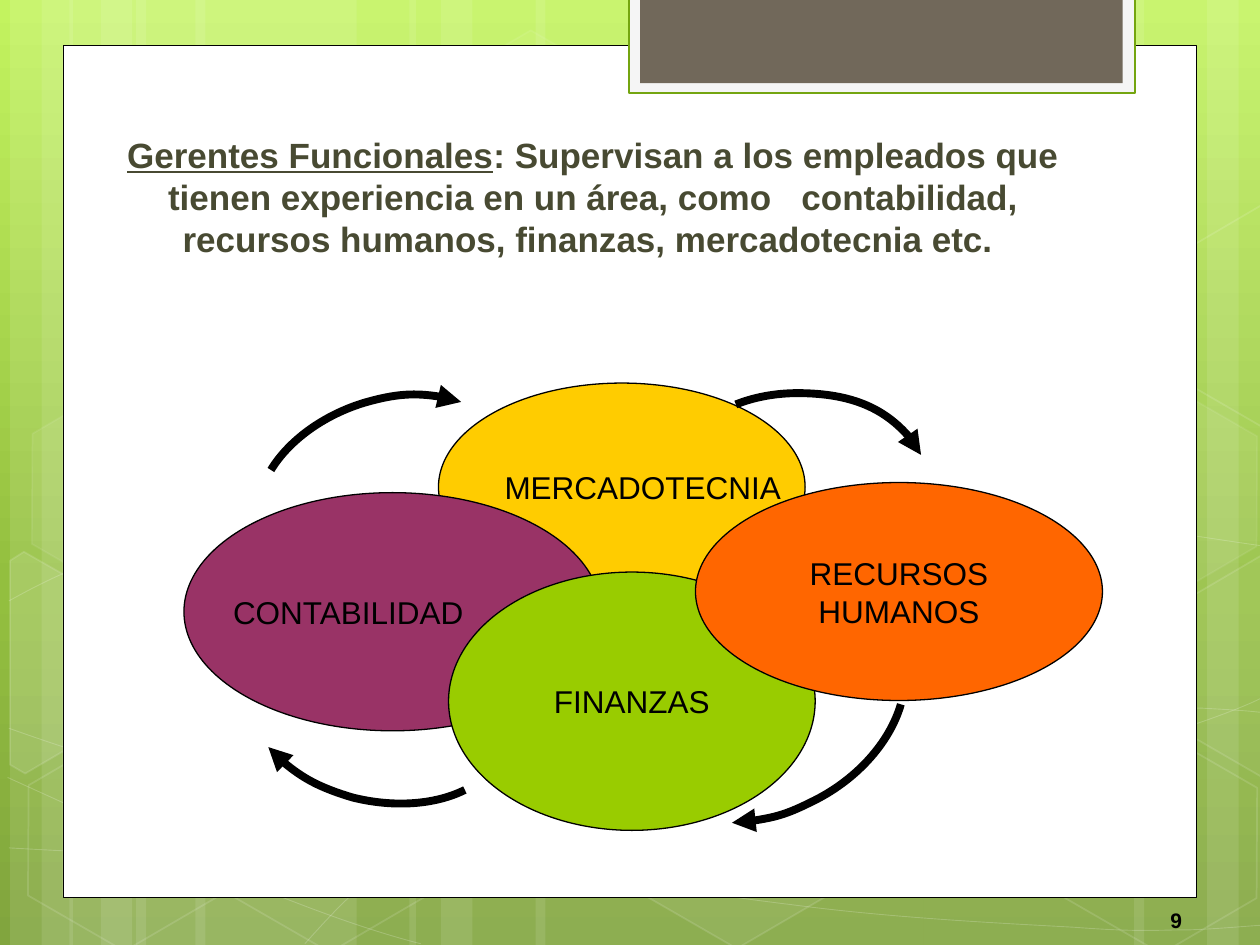
import copy

import lxml.etree
import pptx
import pptx.dml.color
import pptx.enum.shapes
import pptx.enum.text
import pptx.oxml.ns
import pptx.util

Inches = pptx.util.Inches
Pt = pptx.util.Pt
RGBColor = pptx.dml.color.RGBColor
MSO_SHAPE = pptx.enum.shapes.MSO_SHAPE
PP_ALIGN = pptx.enum.text.PP_ALIGN
MSO_ANCHOR = pptx.enum.text.MSO_ANCHOR
qn = pptx.oxml.ns.qn

WHITE = RGBColor(0xFF, 0xFF, 0xFF)
BLACK = RGBColor(0x00, 0x00, 0x00)
TITLE_OLIVE = RGBColor(0x48, 0x4A, 0x32)
TAB_FRAME = RGBColor(0xF5, 0xF5, 0xF5)
TAB_EDGE = RGBColor(0x74, 0xA5, 0x10)
TAB_BROWN = RGBColor(0x71, 0x68, 0x5A)
YELLOW = RGBColor(0xFF, 0xCC, 0x00)
PURPLE = RGBColor(0x99, 0x33, 0x66)
GREEN = RGBColor(0x99, 0xCC, 0x00)
ORANGE = RGBColor(0xFF, 0x66, 0x00)
BACKDROP = [
    (0, RGBColor(0xC3, 0xF3, 0x5F)),
    (0.62, RGBColor(0x93, 0xBF, 0x3F)),
    (1, RGBColor(0x81, 0xA5, 0x3E)),
]

TITLE_RUNS = [
    ("Gerentes Funcionales", {"u": "sng"}),
    (": Supervisan a los empleados que tienen experiencia en un área, como", {}),
    (" ", {"spc": "1112"}),
    ("contabilidad, recursos humanos, finanzas, mercadotecnia etc. ", {}),
]
BANDS = [
    (1.08, 1.75, 0), (0.08, 0.5, 0), (0.33, 0.83, 0), (1.55, 1.75, 0), (0.55, 0.5, 0), (0.8, 0.83, 0),
    (7.33, 1.75, 180), (9.58, 0.5, 180), (9, 0.83, 180), (4.25, 3.08, 0), (3.25, 0.5, 0), (3.5, 0.83, 0),
]
WAVES = [
    [(0.07, 6.73), (0.61, 6.76), (1.15, 6.79), (1.9, 6.78), (2.65, 6.77), (3.58, 6.75), (4.58, 6.65),
     (5.58, 6.55), (7, 6.36), (7.92, 6.17), (8.83, 5.98), (9.77, 5.68), (10.07, 5.51)],
    [(0.07, 4.77), (0.36, 4.61), (0.65, 4.46), (1.21, 4.31), (1.78, 4.16), (2.59, 3.94), (3.47, 3.87),
     (4.36, 3.8), (5.44, 3.79), (6.54, 3.87), (7.64, 3.95), (9.47, 4.26), (10.07, 4.34)],
    [(0.06, 6.17), (1.27, 6.72), (2.47, 7.27), (3.34, 7.49)],
    [(0.07, 5.78), (0.38, 5.89), (0.7, 6), (1.28, 6.16), (1.86, 6.31), (2.73, 6.56), (3.57, 6.73),
     (4.4, 6.9), (5.45, 7.08), (6.28, 7.18), (7.11, 7.29), (8, 7.33), (8.53, 7.36),
     (9.05, 7.4), (9.19, 7.38), (9.45, 7.38), (9.71, 7.37), (9.89, 7.35), (10.07, 7.34)],
    [(2.42, 7.49), (2.6, 7.29), (2.78, 7.09), (3.02, 6.91), (3.26, 6.73), (3.6, 6.53), (3.88, 6.39),
     (4.16, 6.25), (4.33, 6.19), (4.7, 6.09), (5.06, 5.99), (5.73, 5.85), (6.08, 5.78),
     (6.44, 5.71), (6.49, 5.71), (6.8, 5.69), (7.11, 5.66), (7.6, 5.63), (7.94, 5.62),
     (8.29, 5.61), (8.86, 5.62), (8.86, 5.62), (9.08, 5.62), (9.3, 5.62), (9.53, 5.62),
     (9.71, 5.63), (9.88, 5.64), (9.97, 5.65), (10.06, 5.66), (10.03, 5.65), (10.06, 5.66)],
]
HEXAGONS = [
    (3.34, 0.36, 4, 8), (4.97, 5.89, 6, 12), (0.11, 5.91, None, 12), (0.14, 3.12, 7, 8),
    (1.74, 5.92, None, 12), (7.53, 4.53, 10, 12), (8.34, 5.93, None, 12), (8.34, 3.14, 7, 8),
]
CUT_HEXAGONS = [
    ([(0.08, 4.45), (0.19, 4.38), (0.96, 4.82), (0.95, 5.7), (0.2, 6.14), (0.08, 6.07)], 10),
    ([(9.26, 4.85), (10.01, 4.41), (10.09, 4.46), (10.09, 6.13), (10.02, 6.17), (9.26, 5.73)], 4),
    ([(9.26, 2.07), (10.01, 1.63), (10.1, 1.68), (10.09, 3.35), (10.02, 3.39), (9.26, 2.95)], None),
]
DEPARTMENTS = [
    ("MERCADOTECNIA", (3.48, 3.04, 2.91, 1.65), YELLOW, PP_ALIGN.JUSTIFY, 0.1),
    ("CONTABILIDAD", (1.46, 3.91, 3.31, 1.89), PURPLE, PP_ALIGN.CENTER, 0.8),
    ("FINANZAS", (3.56, 4.54, 2.91, 2.05), GREEN, PP_ALIGN.CENTER, 0.1),
    ("RECURSOS\nHUMANOS", (5.52, 3.83, 3.23, 1.73), ORANGE, PP_ALIGN.CENTER, 0.1),
]
CYCLE = [
    [(5.84, 3.21), (5.99, 3.15), (6.16, 3.12), (6.33, 3.12), (6.78, 3.12), (7.17, 3.32), (7.31, 3.61)],
    [(7.15, 5.59), (7.06, 5.9), (6.79, 6.2), (6.43, 6.37), (6.23, 6.47), (6.02, 6.52), (5.81, 6.53)],
    [(2.15, 3.73), (2.29, 3.5), (2.56, 3.3), (2.88, 3.2), (3.15, 3.12), (3.43, 3.11), (3.66, 3.19)],
    [(3.69, 6.27), (3.45, 6.39), (3.12, 6.41), (2.8, 6.33), (2.53, 6.25), (2.28, 6.11), (2.13, 5.93)],
]


def write(frame, text, size=18, color=BLACK, bold=False, align=PP_ALIGN.CENTER,
          anchor=MSO_ANCHOR.MIDDLE, wrap=True):
    """Fill a text frame from a string, or from runs with their own attributes."""
    frame.word_wrap = wrap
    frame.vertical_anchor = anchor
    lines = [[(line, {})] for line in text.split("\n")] if isinstance(text, str) else [text]
    for index, runs in enumerate(lines):
        paragraph = frame.add_paragraph() if index else frame.paragraphs[0]
        paragraph.alignment = align
        for words, attributes in runs:
            run = paragraph.add_run()
            run.text = words
            run.font.name = "Arial"
            run.font.size = Pt(size)
            run.font.bold = bold
            run.font.color.rgb = color
            for key, value in attributes.items():
                run._r.get_or_add_rPr().set(key, value)


def fade(solid_fill, percent):
    """Set the opacity of a solid fill."""
    lxml.etree.SubElement(solid_fill[0], qn("a:alpha"), val=str(percent * 1000))


def paint(shape, fill=None, line=None, weight=1, fill_alpha=100, line_alpha=100):
    """Apply fill, outline and opacity to a shape."""
    shape.shadow.inherit = False
    properties = shape.element.spPr
    if fill is None:
        shape.fill.background()
    else:
        shape.fill.solid()
        shape.fill.fore_color.rgb = fill
        if fill_alpha < 100:
            fade(properties.find(qn("a:solidFill")), fill_alpha)
    if line is None:
        shape.line.fill.background()
    else:
        shape.line.color.rgb = line
        shape.line.width = Pt(weight)
        if line_alpha < 100:
            fade(properties.find(qn("a:ln")).find(qn("a:solidFill")), line_alpha)


def add_preset(slide, preset, box, **look):
    """Add a painted preset shape."""
    shape = slide.shapes.add_shape(preset, *map(Inches, box))
    paint(shape, **look)
    return shape


def add_outline(slide, points, close=False, **look):
    """Add a painted freeform through the given points."""
    corners = [(Inches(x), Inches(y)) for x, y in points]
    builder = slide.shapes.build_freeform(*corners[0])
    builder.add_line_segments(corners[1:], close=close)
    outline = builder.convert_to_shape()
    paint(outline, **look)
    return outline


def add_curve(slide, controls, **look):
    """Add an open freeform of cubic Bezier segments."""
    curve = add_outline(slide, controls[::3], **look)
    segments = list(curve.element.iter(qn("a:lnTo")))
    for index, segment in enumerate(segments):
        bend = lxml.etree.Element(qn("a:cubicBezTo"))
        for x, y in controls[3 * index + 1:3 * index + 4]:
            lxml.etree.SubElement(bend, qn("a:pt"), x=str(Inches(x) - curve.left), y=str(Inches(y) - curve.top))
        segment.getparent().replace(segment, bend)
    return curve


def add_backdrop(slide):
    """Draw the green gradient with its bands, waves and hexagons."""
    fill = slide.background.fill
    fill.gradient()
    fill.gradient_angle = 270
    stop_list = next(slide.element.iter(qn("a:gsLst")))
    stop_list.append(copy.deepcopy(stop_list[-1]))
    for stop, (position, color) in zip(fill.gradient_stops, BACKDROP):
        stop.position = position
        stop.color.rgb = color
    for left, width, turn in BANDS:
        band = add_preset(slide, MSO_SHAPE.RECTANGLE, (left, 0, width, 7.5), fill=WHITE, fill_alpha=10)
        band.rotation = turn
    for wave in WAVES:
        add_curve(slide, wave, line=WHITE, weight=0.5, line_alpha=20)
    for left, top, alpha, line_alpha in HEXAGONS:
        hexagon = add_preset(slide, MSO_SHAPE.HEXAGON, (left, top, 1.75, 1.52), fill=WHITE if alpha else None,
                             fill_alpha=alpha or 100, line=WHITE, line_alpha=line_alpha)
        hexagon.rotation = 30
        hexagon.adjustments[0] = 0.285
    for corners, alpha in CUT_HEXAGONS:
        add_outline(slide, corners, close=True, fill=WHITE if alpha else None,
                    fill_alpha=alpha or 100, line=WHITE, line_alpha=12)


def add_panel(slide):
    """Draw the white panel and the tab at its top."""
    add_preset(slide, MSO_SHAPE.RECTANGLE, (0.5, 0.36, 9, 6.76), fill=WHITE, line=BLACK, weight=0.5)
    add_preset(slide, MSO_SHAPE.RECTANGLE, (4.99, -0.02, 4.02, 0.76), fill=TAB_FRAME, line=TAB_EDGE, weight=1.25)
    add_preset(slide, MSO_SHAPE.RECTANGLE, (5.08, -0.02, 3.83, 0.68), fill=TAB_BROWN)


def add_title(slide):
    """Place the title in front of the panel."""
    title = slide.shapes.title
    title.left, title.top, title.width, title.height = map(Inches, (0.68, 1.01, 8.05, 1.1))
    write(title.text_frame, TITLE_RUNS, size=20, color=TITLE_OLIVE, bold=True, anchor=MSO_ANCHOR.TOP)
    title.element.getparent().append(title.element)


def add_department(slide, label, box, color, align, right_margin):
    """Add one labelled department ellipse."""
    ellipse = add_preset(slide, MSO_SHAPE.OVAL, box, fill=color, line=BLACK, weight=0.75)
    ellipse.text_frame.margin_right = Inches(right_margin)
    write(ellipse.text_frame, label, align=align, wrap=False)


def add_cycle_arrow(slide, controls):
    """Add a thick curved arrow."""
    arrow = add_curve(slide, controls, line=BLACK, weight=4.5)
    lxml.etree.SubElement(arrow.element.spPr.find(qn("a:ln")), qn("a:tailEnd"), type="triangle")


def main():
    """Build and save the slide."""
    deck = pptx.Presentation()
    deck.slide_width, deck.slide_height = Inches(10), Inches(7.5)
    slide = deck.slides.add_slide(deck.slide_layouts[5])
    add_backdrop(slide)
    add_panel(slide)
    add_title(slide)
    for department in DEPARTMENTS:
        add_department(slide, *department)
    for controls in CYCLE:
        add_cycle_arrow(slide, controls)
    page_number = slide.shapes.add_textbox(*map(Inches, (8.02, 7.1, 1.46, 0.4)))
    write(page_number.text_frame, "9", size=12, bold=True, align=PP_ALIGN.RIGHT)
    deck.save("out.pptx")


if __name__ == "__main__":
    main()
